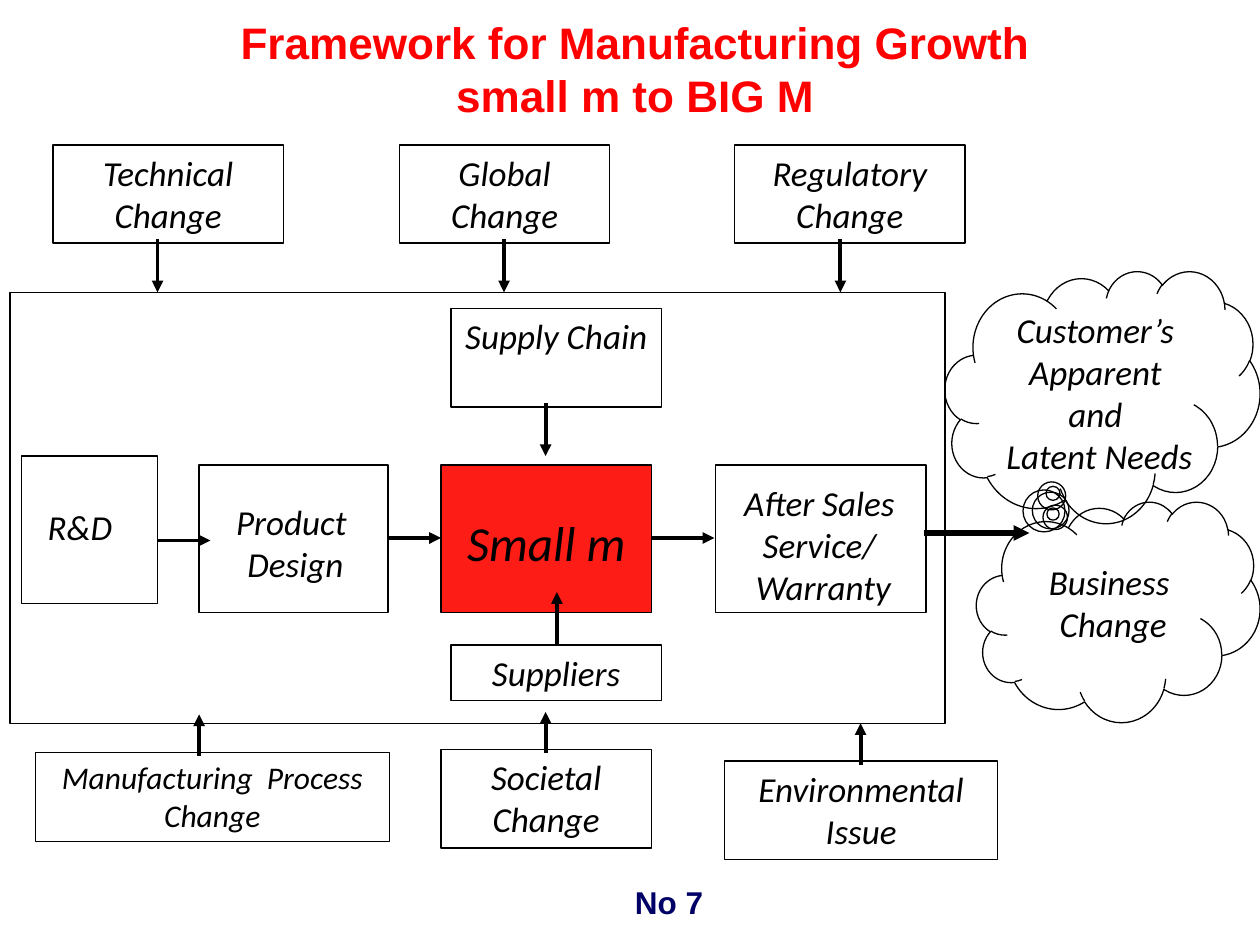
from lxml.etree import SubElement
from pptx import Presentation
from pptx.dml.color import RGBColor
from pptx.enum.shapes import MSO_CONNECTOR as CONNECTOR, MSO_SHAPE as SHAPE
from pptx.enum.text import MSO_ANCHOR as ANCHOR, PP_ALIGN as ALIGN
from pptx.oxml.ns import qn
from pptx.util import Inches, Pt

# Content: places are left, top, width, height in inches
TITLE = ("Framework for Manufacturing Growth\vsmall m to BIG M", (0.5, 0.08, 9.08, 0.83))
FOOTER = ("No 7", (4.69, 7.01, 0.89, 0.3))
FACTORY = (0.08, 2.32, 7.42, 3.42)
FACTOR_BOXES = [
    ("Technical Change", (0.42, 1.15, 1.83, 0.78), 20),
    ("Global Change", (3.17, 1.15, 1.67, 0.78), 20),
    ("Regulatory Change", (5.83, 1.15, 1.83, 0.78), 20),
    ("Supply Chain", (3.58, 2.45, 1.67, 0.78), 20),
    ("Suppliers", (3.58, 5.12, 1.67, 0.44), 20),
    ("Manufacturing  Process Change", (0.28, 5.97, 2.81, 0.71), 18),
    ("Societal Change", (3.5, 5.95, 1.67, 0.78), 20),
    ("Environmental Issue", (5.75, 6.04, 2.17, 0.78), 20),
]
# Process step: label, label place, size, alignment, box place, fill
STEPS = [
    ("R&D", (0.28, 3.96, 0.81, 0.43), 20, ALIGN.LEFT, (0.17, 3.62, 1.08, 1.17), None),
    ("Product \vDesign", (1.68, 3.92, 1.33, 0.77), 20, ALIGN.CENTER,
     (1.58, 3.69, 1.5, 1.17), None),
    ("Small m", (3.6, 4.02, 1.47, 0.57), 28, ALIGN.CENTER,
     (3.5, 3.69, 1.67, 1.17), "FE1C16"),
    ("After Sales \vService/ \vWarranty", (5.67, 3.77, 1.73, 1.1), 20, ALIGN.CENTER,
     (5.68, 3.69, 1.67, 1.17), None),
]
# Cloud: label, label place, cloud place, tail position
CLOUDS = [
    ("Customer’s \vApparent \vand \vLatent Needs", (7.75, 2.4, 1.95, 1.43),
     (7.5, 2.15, 2.5, 2), (-0.157, 0.383)),
    ("Business \vChange", (8.08, 4.4, 1.51, 0.77),
     (7.75, 3.98, 2.25, 1.75), (-0.23, -0.443)),
]
DOWN_ARROWS = [(x, 1.9, x, 2.32) for x in (1.25, 4, 6.67)] + [(4.33, 3.2, 4.33, 3.62)]
UP_ARROWS = [(x, y, x, y - 0.33) for x, y in ((1.58, 6), (4.33, 5.98), (6.83, 6.07))]
UP_ARROWS.append((4.42, 5.12, 4.42, 4.7))
STEP_ARROWS = [(1.25, 4.29, 1.67, 4.29), (3.08, 4.27, 3.5, 4.27), (5.17, 4.27, 5.67, 4.27)]
OUTPUT_ARROW = (7.33, 4.23, 8.17, 4.23)

BODY = {"name": "Calibri", "italic": True}
HEADING = {"name": "Arial", "bold": True}

presentation = Presentation()
presentation.slide_width, presentation.slide_height = Inches(10), Inches(7.5)
slide = presentation.slides.add_slide(presentation.slide_layouts[6])


def color(value):
    return RGBColor.from_string(value)


def inches(place):
    return [Inches(length) for length in place]


def write(shape, text, size, font=BODY, ink="000000", align=ALIGN.CENTER, wrap=True, inset=(0.1, 0.05)):
    frame = shape.text_frame
    frame.word_wrap = wrap
    frame.vertical_anchor = ANCHOR.TOP
    frame.margin_left = frame.margin_right = Inches(inset[0])
    frame.margin_top = frame.margin_bottom = Inches(inset[1])
    frame.text = text
    paragraph = frame.paragraphs[0]
    paragraph.alignment = align
    for run in paragraph.runs:
        for name, value in {**font, "size": Pt(size)}.items():
            setattr(run.font, name, value)
        run.font.color.rgb = color(ink)


def add_label(text, place, size, **style):
    write(slide.shapes.add_textbox(*inches(place)), text, size, **style)


def add_outline(place, kind=SHAPE.RECTANGLE, fill=None):
    shape = slide.shapes.add_shape(kind, *inches(place))
    shape.shadow.inherit = False
    if fill:
        shape.fill.solid()
        shape.fill.fore_color.rgb = color(fill)
    else:
        shape.fill.background()
    shape.line.color.rgb = color("000000")
    shape.line.width = Pt(0.75)
    return shape


def add_arrow(ends, width=2.25):
    arrow = slide.shapes.add_connector(CONNECTOR.STRAIGHT, *inches(ends))
    arrow.line.color.rgb = color("000000")
    arrow.line.width = Pt(width)
    SubElement(arrow.line._get_or_add_ln(), qn("a:tailEnd"), type="triangle")
    SubElement(arrow._element.spPr, qn("a:effectLst"))


# Title and footer
add_label(*FOOTER, 18, font=HEADING, ink="000066", align=ALIGN.RIGHT, wrap=False, inset=(0, 0))
add_label(*TITLE, 25.2, font=HEADING, ink="FF0000", inset=(0.1, 0.04))

# Factory frame and the factors around it
add_outline(FACTORY)
for text, place, size in FACTOR_BOXES:
    write(add_outline(place), text, size)

# Process steps
for text, label_place, size, align, box_place, fill in STEPS:
    add_outline(box_place, fill=fill)
    add_label(text, label_place, size, align=align, wrap=False)

# Arrows between the parts
for ends in DOWN_ARROWS + UP_ARROWS + STEP_ARROWS:
    add_arrow(ends)

# Customer and business clouds
for text, label_place, cloud_place, tail in CLOUDS:
    add_label(text, label_place, 20, wrap=False)
    cloud = add_outline(cloud_place, SHAPE.CLOUD_CALLOUT)
    cloud.adjustments[0], cloud.adjustments[1] = tail
add_arrow(OUTPUT_ARROW, 3)

presentation.save("out.pptx")
